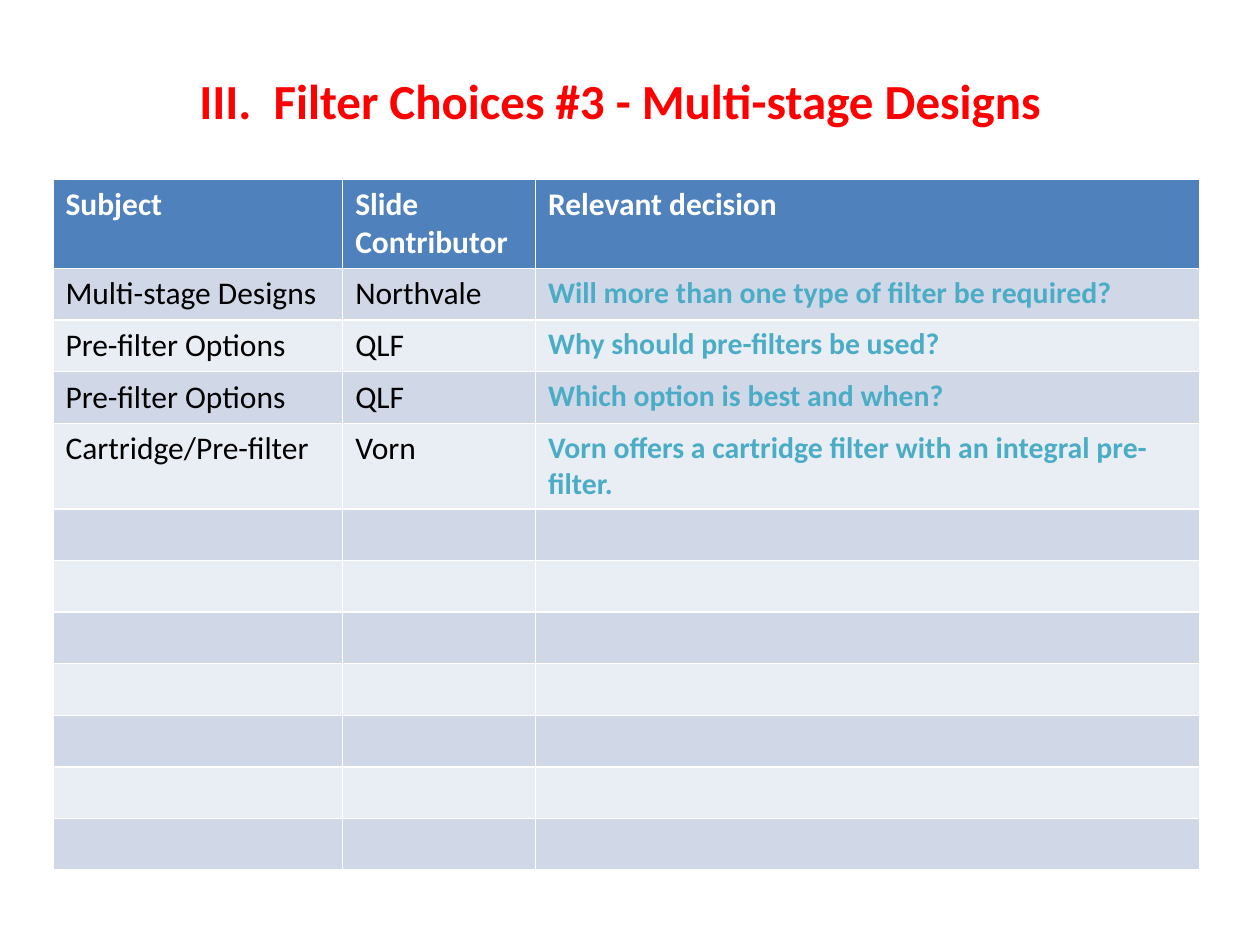
from dataclasses import dataclass

from pptx import Presentation
from pptx.dml.color import RGBColor
from pptx.enum import text
from pptx.util import Inches, Pt

FONT = "Calibri"
RED = RGBColor(0xFF, 0x00, 0x00)
WHITE = RGBColor(0xFF, 0xFF, 0xFF)
BLACK = RGBColor(0x00, 0x00, 0x00)
TEAL = RGBColor(0x4B, 0xAC, 0xC6)
HEADER_BLUE = RGBColor(0x4F, 0x81, 0xBD)
BANDS = (RGBColor(0xE9, 0xED, 0xF4), RGBColor(0xD0, 0xD8, 0xE8))

COLUMN_WIDTHS = (2.3, 1.53, 5.27)
ROW_COUNT = 12
ROW_HEIGHT = 0.41


@dataclass(frozen=True)
class Style:
    size: float
    color: RGBColor
    bold: bool = False


@dataclass(frozen=True)
class Topic:
    subject: str
    contributor: str
    decision: str

    def texts(self) -> tuple[str, str, str]:
        return self.subject, self.contributor, self.decision


TITLE = Style(28, RED, True)
HEADER = Style(18, WHITE, True)
PLAIN = Style(18, BLACK)
DECISION = Style(17, TEAL, True)

HEADINGS = Topic("Subject", "Slide Contributor", "Relevant decision")
TOPICS = (
    Topic("Multi-stage Designs", "Northvale",
          "Will more than one type of filter be required?"),
    Topic("Pre-filter Options", "QLF", "Why should pre-filters be used?"),
    Topic("Pre-filter Options", "QLF", "Which option is best and when?"),
    Topic("Cartridge/Pre-filter", "Vorn",
          "Vorn offers a cartridge filter with an integral pre-filter."),
)


def write(frame, content: str, style: Style) -> None:
    paragraph = frame.paragraphs[0]
    paragraph.text = content
    paragraph.font.name = FONT
    paragraph.font.size = Pt(style.size)
    paragraph.font.bold = style.bold
    paragraph.font.color.rgb = style.color


def add_title(slide, content: str) -> None:
    title = slide.shapes.title
    title.left, title.top = Inches(0.42), Inches(0.17)
    title.width, title.height = Inches(9), Inches(1.25)
    title.text_frame.vertical_anchor = text.MSO_ANCHOR.MIDDLE
    write(title.text_frame, content, TITLE)
    title.text_frame.paragraphs[0].alignment = text.PP_ALIGN.CENTER


def fill_row(row, topic: Topic | None, styles: tuple[Style, ...], color: RGBColor) -> None:
    row.height = Inches(ROW_HEIGHT)
    for cell in row.cells:
        cell.fill.solid()
        cell.fill.fore_color.rgb = color
    if topic:
        for cell, content, style in zip(row.cells, topic.texts(), styles):
            write(cell.text_frame, content, style)


def add_topic_table(slide) -> None:
    table = slide.shapes.add_table(
        ROW_COUNT, len(COLUMN_WIDTHS), Inches(0.42), Inches(1.42),
        Inches(sum(COLUMN_WIDTHS)), Inches(ROW_COUNT * ROW_HEIGHT)).table
    for column, width in zip(table.columns, COLUMN_WIDTHS):
        column.width = Inches(width)
    fill_row(table.rows[0], HEADINGS, (HEADER,) * 3, HEADER_BLUE)
    for number in range(1, ROW_COUNT):
        topic = TOPICS[number - 1] if number <= len(TOPICS) else None
        fill_row(table.rows[number], topic, (PLAIN, PLAIN, DECISION), BANDS[number % 2])


def main() -> None:
    presentation = Presentation()
    presentation.slide_width, presentation.slide_height = Inches(10), Inches(7.5)
    slide = presentation.slides.add_slide(presentation.slide_layouts[5])
    add_title(slide, "III.  Filter Choices #3 - Multi-stage Designs")
    add_topic_table(slide)
    presentation.save("out.pptx")


if __name__ == "__main__":
    main()
